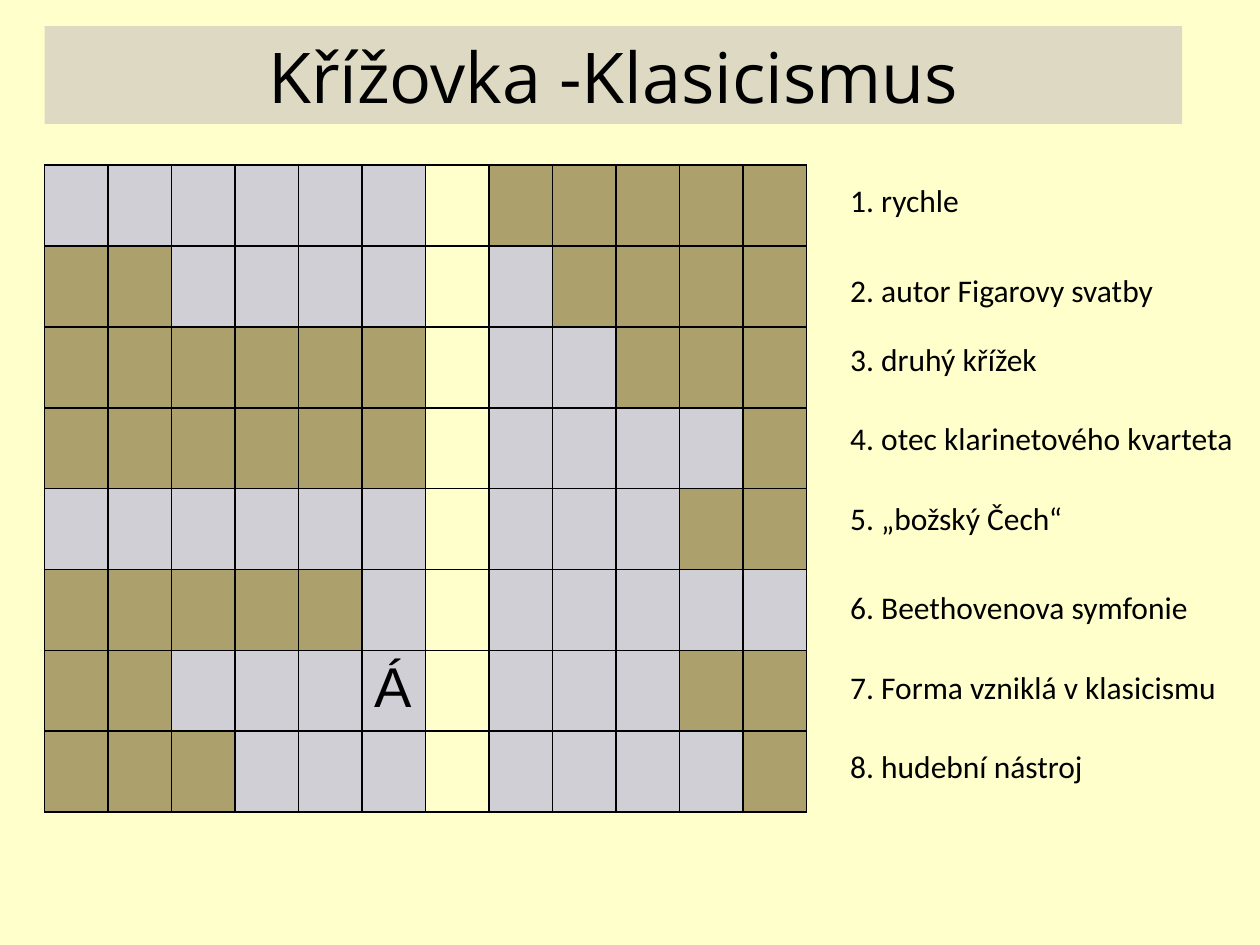
from pptx import Presentation
from pptx import util as u
from pptx.dml.color import RGBColor
from pptx.enum import shapes, text
from pptx.oxml import parse_xml
from pptx.oxml.ns import nsdecls

BACKGROUND, BLANK, LETTER = "FFFFCC", "ACA16C", "CFCFD5"
COLUMNS, SECRET_COLUMN = 12, 6
COLUMN_WIDTH, ROW_HEIGHT = 1.28, 1.63
WORD_SPANS = [(0, 6), (2, 7), (6, 8), (6, 10), (0, 9), (5, 11), (2, 9), (3, 10)]
CLUES = [
    ("1. rychle", 3.53, 6.91),
    ("2. autor Figarovy svatby", 5.33, 8.0),
    ("3. druhý křížek", 6.73, 6.5),
    ("4. otec klarinetového kvarteta", 8.33, 10.59),
    ("5. „božský Čech“", 9.93, 7.7),
    ("6. Beethovenova symfonie", 11.73, 7.39),
    ("7. Forma vzniklá v klasicismu", 13.34, 8.64),
    ("8. hudební nástroj", 14.94, 7.44),
]


def set_fill(target, color):
    """Give the target a solid fill from a hex string."""
    target.fill.solid()
    target.fill.fore_color.rgb = RGBColor.from_string(color)


def write_text(frame, content, size=18, font="Calibri", color="000000",
               align=text.PP_ALIGN.LEFT):
    """Write one formatted paragraph into a text frame."""
    frame.word_wrap = True
    paragraph = frame.paragraphs[0]
    paragraph.alignment = align
    run = paragraph.add_run()
    run.text = content
    run.font.size = u.Pt(size)
    run.font.name = font
    run.font.color.rgb = RGBColor.from_string(color)


def add_title(slide, content):
    """Add the filled title bar."""
    bar = slide.shapes.add_shape(
        shapes.MSO_SHAPE.RECTANGLE, u.Cm(0.9), u.Cm(0.53), u.Cm(22.93), u.Cm(1.97))
    bar.shadow.inherit = False
    set_fill(bar, "DDD9C3")
    bar.line.fill.background()
    write_text(bar.text_frame, content, size=40, font="Open Sans",
               align=text.PP_ALIGN.CENTER)


def set_borders(cell, color="000000", width=1):
    """Draw a solid line on all four sides of a cell."""
    properties = cell._tc.get_or_add_tcPr()
    for index, side in enumerate(("lnL", "lnR", "lnT", "lnB")):
        properties.insert(index, parse_xml(
            f'<a:{side} {nsdecls("a")} w="{u.Pt(width)}"><a:solidFill>'
            f'<a:srgbClr val="{color}"/></a:solidFill></a:{side}>'))


def cell_color(column, first, last):
    """Return the fill for a column of a row whose word spans first to last."""
    if column == SECRET_COLUMN:
        return BACKGROUND
    return LETTER if first <= column <= last else BLANK


def add_crossword(slide):
    """Add the crossword grid as a table."""
    table = slide.shapes.add_table(
        len(WORD_SPANS), COLUMNS, u.Cm(0.9), u.Cm(3.33),
        u.Cm(COLUMNS * COLUMN_WIDTH), u.Cm(len(WORD_SPANS) * ROW_HEIGHT)).table
    table.first_row = table.horz_banding = False
    for column in table.columns:
        column.width = u.Cm(COLUMN_WIDTH)
    for row, (first, last) in enumerate(WORD_SPANS):
        table.rows[row].height = u.Cm(ROW_HEIGHT)
        for column in range(COLUMNS):
            cell = table.cell(row, column)
            set_fill(cell, cell_color(column, first, last))
            set_borders(cell)
    write_text(table.cell(6, 5).text_frame, "Á", size=32, font="Arial")


def add_clue(slide, content, top, width):
    """Add one clue beside the grid."""
    box = slide.shapes.add_textbox(u.Cm(16.89), u.Cm(top), u.Cm(width), u.Cm(1.02))
    write_text(box.text_frame, content)
    box.text_frame.auto_size = text.MSO_AUTO_SIZE.SHAPE_TO_FIT_TEXT


def main():
    """Build and save the crossword slide."""
    presentation = Presentation()
    presentation.slide_width, presentation.slide_height = u.Cm(25.4), u.Cm(19.05)
    slide = presentation.slides.add_slide(presentation.slide_layouts[6])
    set_fill(slide.background, BACKGROUND)
    add_title(slide, "Křížovka -Klasicismus")
    add_crossword(slide)
    for clue in CLUES:
        add_clue(slide, *clue)
    presentation.save("out.pptx")


if __name__ == "__main__":
    main()
